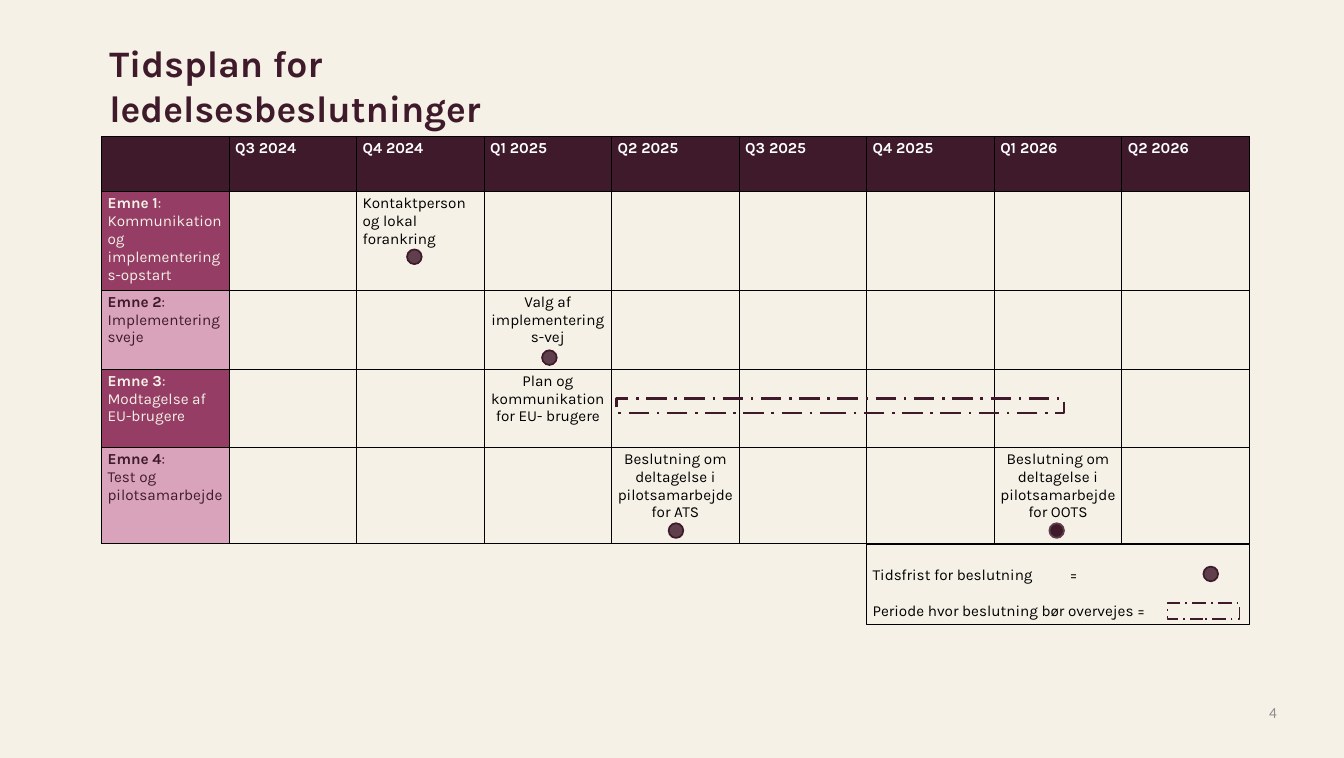
from lxml.etree import SubElement
from pptx import Presentation
from pptx.dml.color import RGBColor
from pptx.enum.dml import MSO_LINE
from pptx.enum.shapes import MSO_SHAPE
from pptx.enum.text import MSO_ANCHOR, PP_ALIGN
from pptx.oxml.ns import qn
from pptx.util import Pt

COLORS = {
    "cream": "F5F1E6", "plum": "3F1A2B", "mauve": "5F3F4C", "berry": "953D65",
    "pink": "D9A3BB", "black": "000000", "white": "FFFFFF", "grey": "8C8C8C",
}
FONT = "Karla"
SIZE = 18

TITLE = "Tidsplan for ledelsesbeslutninger"
QUARTERS = ["Q3 2024", "Q4 2024", "Q1 2025", "Q2 2025",
            "Q3 2025", "Q4 2025", "Q1 2026", "Q2 2026"]
# Label, description, fill, text colour, row height
TOPICS = [
    ("Emne 1", ": Kommunikation og implementerings-opstart", "berry", "cream", 116),
    ("Emne 2", ": Implementeringsveje", "pink", "plum", 93),
    ("Emne 3", ": Modtagelse af EU-brugere", "berry", "cream", 92),
    ("Emne 4", ": \vTest og pilotsamarbejde", "pink", "plum", 114),
]
# (topic row, quarter column): text, alignment
DECISIONS = {
    (1, 2): ("Kontaktperson og lokal forankring", PP_ALIGN.LEFT),
    (2, 3): ("Valg af implementerings-vej", PP_ALIGN.CENTER),
    (3, 3): ("Plan og kommunikation for EU- brugere", PP_ALIGN.CENTER),
    (4, 4): ("Beslutning om deltagelse i pilotsamarbejde for ATS", PP_ALIGN.CENTER),
    (4, 7): ("Beslutning om deltagelse i pilotsamarbejde for OOTS", PP_ALIGN.CENTER),
}
LEGEND = ["Tidsfrist for beslutning\t=", "Periode hvor beslutning bør overvejes ="]
# Left, top, fill, line
DEADLINES = [
    (479.5, 293.8, "mauve", "plum"),
    (638.6, 412.6, "mauve", "plum"),
    (787.7, 616.3, "mauve", "plum"),
    (1236.2, 616.3, "plum", "mauve"),
    (1417.7, 667.4, "mauve", "plum"),
]
# Left, top, width, height, line width
PERIODS = [(726.5, 469.4, 527, 17.3, 3), (1375.2, 710.6, 85, 18.7, 2)]
PAGE_NUMBER = "4"

TABLE_LEFT, TABLE_TOP = 119.5, 160.6
COLUMN_WIDTH = 150.24
HEADER_HEIGHT = 65
LEGEND_TOP, LEGEND_HEIGHT = 640.8, 94.3
LEGEND_LINE = 21
DOT = 17.3


def color(name):
    return RGBColor.from_string(COLORS[name])


def style(font, tone, size=SIZE, bold=False, family=FONT):
    font.name, font.size, font.bold = family, Pt(size), bold
    font.color.rgb = color(tone)


def add_outline(slide, kind, box, line, width, fill=None):
    shape = slide.shapes.add_shape(kind, *map(Pt, box))
    shape.shadow.inherit = False
    if fill:
        shape.fill.solid()
        shape.fill.fore_color.rgb = color(fill)
    else:
        shape.fill.background()
    shape.line.color.rgb = color(line)
    shape.line.width = Pt(width)
    return shape


def add_text(slide, box, text):
    frame = slide.shapes.add_textbox(*map(Pt, box)).text_frame
    frame.word_wrap = True
    frame.text = text
    return frame


def format_cell(cell, fill):
    """Give the cell thin black borders and a solid fill."""
    properties = cell._tc.get_or_add_tcPr()
    for side in ("lnL", "lnR", "lnT", "lnB"):
        border = SubElement(properties, qn(f"a:{side}"), w=str(Pt(1)))
        paint = SubElement(border, qn("a:solidFill"))
        SubElement(paint, qn("a:srgbClr"), val=COLORS["black"])
    cell.fill.solid()
    cell.fill.fore_color.rgb = color(fill)


def add_schedule(slide):
    heights = [HEADER_HEIGHT] + [topic[-1] for topic in TOPICS]
    columns = len(QUARTERS) + 1
    table = slide.shapes.add_table(
        len(heights), columns, Pt(TABLE_LEFT), Pt(TABLE_TOP),
        Pt(columns * COLUMN_WIDTH), Pt(sum(heights))).table
    for column in table.columns:
        column.width = Pt(COLUMN_WIDTH)
    for row, height in zip(table.rows, heights):
        row.height = Pt(height)

    for r in range(len(heights)):
        for c in range(columns):
            fill = "plum" if r == 0 else TOPICS[r - 1][2] if c == 0 else "cream"
            format_cell(table.cell(r, c), fill)

    for c, quarter in enumerate(QUARTERS, 1):
        heading = table.cell(0, c).text_frame
        heading.text = quarter
        style(heading.paragraphs[0].font, "white", bold=True)

    for r, (label, description, _, tone, _) in enumerate(TOPICS, 1):
        topic = table.cell(r, 0).text_frame
        topic.text = label + description.split("\v")[0]
        paragraph = topic.paragraphs[0]
        paragraph.runs[0].text = label
        parts = description.split("\v")
        for i, part in enumerate(parts):
            if i:
                paragraph.add_line_break()
            paragraph.add_run().text = part
        for run in paragraph.runs:
            style(run.font, tone, bold=run.text == label)

    for (r, c), (text, alignment) in DECISIONS.items():
        decision = table.cell(r, c).text_frame
        decision.text = text
        decision.paragraphs[0].alignment = alignment
        style(decision.paragraphs[0].font, "black")


def add_legend(slide):
    box = (TABLE_LEFT + 6 * COLUMN_WIDTH, LEGEND_TOP, 3 * COLUMN_WIDTH, LEGEND_HEIGHT)
    frame = add_outline(slide, MSO_SHAPE.RECTANGLE, box, "black", 0.75).text_frame
    frame.word_wrap = True
    frame.vertical_anchor = MSO_ANCHOR.TOP
    frame.margin_top = Pt(3.6 + LEGEND_LINE)
    frame.text = "\n".join(LEGEND)
    for i, paragraph in enumerate(frame.paragraphs):
        paragraph.alignment = PP_ALIGN.LEFT
        if i:
            paragraph.space_before = Pt(LEGEND_LINE)
        else:
            tabs = SubElement(paragraph._p.get_or_add_pPr(), qn("a:tabLst"))
            SubElement(tabs, qn("a:tab"), pos=str(Pt(232)), algn="l")
        style(paragraph.font, "black")


def main():
    deck = Presentation()
    deck.slide_width, deck.slide_height = Pt(1583.28), Pt(892.8)
    slide = deck.slides.add_slide(deck.slide_layouts[6])
    slide.background.fill.solid()
    slide.background.fill.fore_color.rgb = color("cream")

    title = add_text(slide, (121.7, 43.9, 634.3, 60.5), TITLE)
    style(title.paragraphs[0].font, "plum", 44, True)

    add_schedule(slide)
    add_legend(slide)

    for left, top, fill, line in DEADLINES:
        add_outline(slide, MSO_SHAPE.OVAL, (left, top, DOT, DOT), line, 2, fill)
    for *box, width in PERIODS:
        period = add_outline(slide, MSO_SHAPE.RECTANGLE, box, "plum", width)
        period.line.dash_style = MSO_LINE.LONG_DASH_DOT

    number = add_text(slide, (1139.8, 828, 364.3, 44.6), PAGE_NUMBER)
    number.margin_left = number.margin_right = 0
    number.margin_top = number.margin_bottom = 0
    number.paragraphs[0].alignment = PP_ALIGN.RIGHT
    style(number.paragraphs[0].font, "grey", family="Calibri")

    deck.save("out.pptx")


if __name__ == "__main__":
    main()
